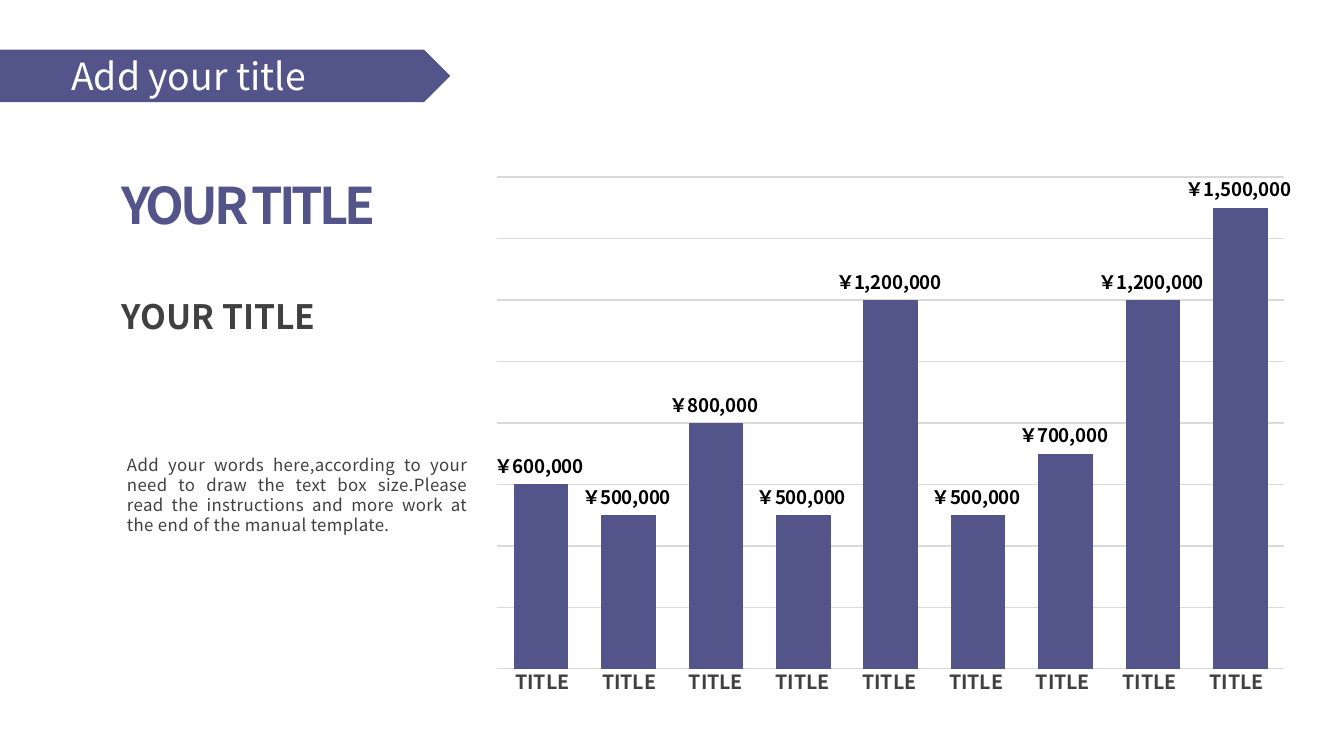
from lxml import etree
from pptx import Presentation
from pptx.chart.data import CategoryChartData
from pptx.dml.color import RGBColor
from pptx.enum.chart import XL_CHART_TYPE, XL_LABEL_POSITION
from pptx.enum.shapes import MSO_SHAPE
from pptx.enum.text import MSO_ANCHOR, MSO_AUTO_SIZE, PP_ALIGN
from pptx.oxml.ns import qn
from pptx.util import Cm, Pt

PURPLE = RGBColor(0x53, 0x54, 0x8A)
GRAY = RGBColor(0x40, 0x40, 0x40)
GRID = RGBColor(0xD9, 0xD9, 0xD9)
WHITE = RGBColor(0xFF, 0xFF, 0xFF)
BLACK = RGBColor(0, 0, 0)
FONT = "Noto Sans CJK JP"
LABEL_FONT = "Noto Sans CJK SC"
YEN = '"￥"#,##0_);[Red]\\("￥"#,##0\\)'


def style(font, name, size, color, bold=False):
    font.name = name
    font.size = Pt(size)
    font.color.rgb = color
    font.bold = bold


def add_text(text, left, top, width, height, size, color=GRAY, bold=True, space=0):
    box = slide.shapes.add_textbox(Cm(left), Cm(top), Cm(width), Cm(height))
    frame = box.text_frame
    frame.word_wrap = True
    frame.auto_size = MSO_AUTO_SIZE.SHAPE_TO_FIT_TEXT
    frame.margin_left = frame.margin_right = Cm(0.19)
    frame.margin_top = frame.margin_bottom = Cm(0.1)
    para = frame.paragraphs[0]
    run = para.add_run()
    run.text = text
    style(para.font, FONT, size, color, bold)
    if space:
        run.font._element.set("spc", str(space))
    return para


deck = Presentation()
deck.slide_width, deck.slide_height = Cm(25.4), Cm(14.28)
slide = deck.slides.add_slide(deck.slide_layouts[5])

# Banner, kept behind the title
title = slide.shapes.title
banner = slide.shapes.add_shape(MSO_SHAPE.PENTAGON, 0, Cm(0.94), Cm(8.51), Cm(0.99))
banner.shadow.inherit = False
banner.fill.solid()
banner.fill.fore_color.rgb = PURPLE
banner.line.fill.background()
title._element.addprevious(banner._element)

# Title
title.left, title.top, title.width, title.height = Cm(1.09), Cm(0.84), Cm(6.86), Cm(1.19)
title.text = "Add your title"
frame = title.text_frame
frame.auto_size = MSO_AUTO_SIZE.NONE
frame.vertical_anchor = MSO_ANCHOR.MIDDLE
para = frame.paragraphs[0]
para.alignment = PP_ALIGN.LEFT
style(para.font, FONT, 20, WHITE)

# Left column
add_text("YOUR TITLE", 2.11, 3.18, 6.25, 1.35, 27, PURPLE, space=-220)
add_text("YOUR TITLE", 2.11, 5.49, 6.99, 0.97, 18)
body = add_text(
    "Add your words here,according to your need to draw the text box size."
    "Please read the instructions and more work at the end of the manual template.",
    2.21, 8.48, 6.81, 1.73, 9, bold=False, space=20)
body.alignment = PP_ALIGN.JUSTIFY

# Column chart
data = CategoryChartData(number_format=YEN)
data.categories = [str(n) for n in range(1, 10)]
data.add_series("Series 1", [600000, 500000, 800000, 500000, 1200000,
                             500000, 700000, 1200000, 1500000])
chart = slide.shapes.add_chart(XL_CHART_TYPE.COLUMN_CLUSTERED, Cm(9.09), Cm(3.15),
                               Cm(15.49), Cm(9.68), data).chart
chart.has_legend = False
chart.has_title = False
style(chart.font, LABEL_FONT, 10, BLACK, True)
chart.category_axis.visible = False
axis = chart.value_axis
axis.visible = False
axis.minimum_scale, axis.maximum_scale, axis.major_unit = 0, 1600000, 200000
axis.tick_labels.number_format = YEN
axis.tick_labels.number_format_is_linked = False
axis.has_major_gridlines = True
axis.major_gridlines.format.line.color.rgb = GRID
axis.major_gridlines.format.line.width = Pt(0.75)

# Bars and value labels
plot = chart.plots[0]
plot.gap_width = 60
plot.vary_by_categories = False
bars = plot.series[0]
bars.format.fill.solid()
bars.format.fill.fore_color.rgb = PURPLE
labels = bars.data_labels
labels.show_value = True
labels.position = XL_LABEL_POSITION.OUTSIDE_END
labels.number_format = YEN
labels.number_format_is_linked = False
style(labels.font, LABEL_FONT, 10, BLACK, True)

# Plot area inside the chart frame
area = chart._chartSpace.find(".//" + qn("c:plotArea"))
for old in area.findall(qn("c:layout")):
    area.remove(old)
layout = etree.Element(qn("c:layout"))
area.insert(0, layout)
manual = etree.SubElement(layout, qn("c:manualLayout"))
for tag, val in (("layoutTarget", "inner"), ("xMode", "edge"), ("yMode", "edge"),
                 ("x", "0.02"), ("y", "0.02"), ("w", "0.96"), ("h", "0.96")):
    etree.SubElement(manual, qn("c:" + tag)).set("val", val)

# Captions under the bars
for n in range(9):
    add_text("TITLE", 9.55 + 1.64 * n, 12.55, 1.55, 0.64, 10.5)

deck.save("out.pptx")
